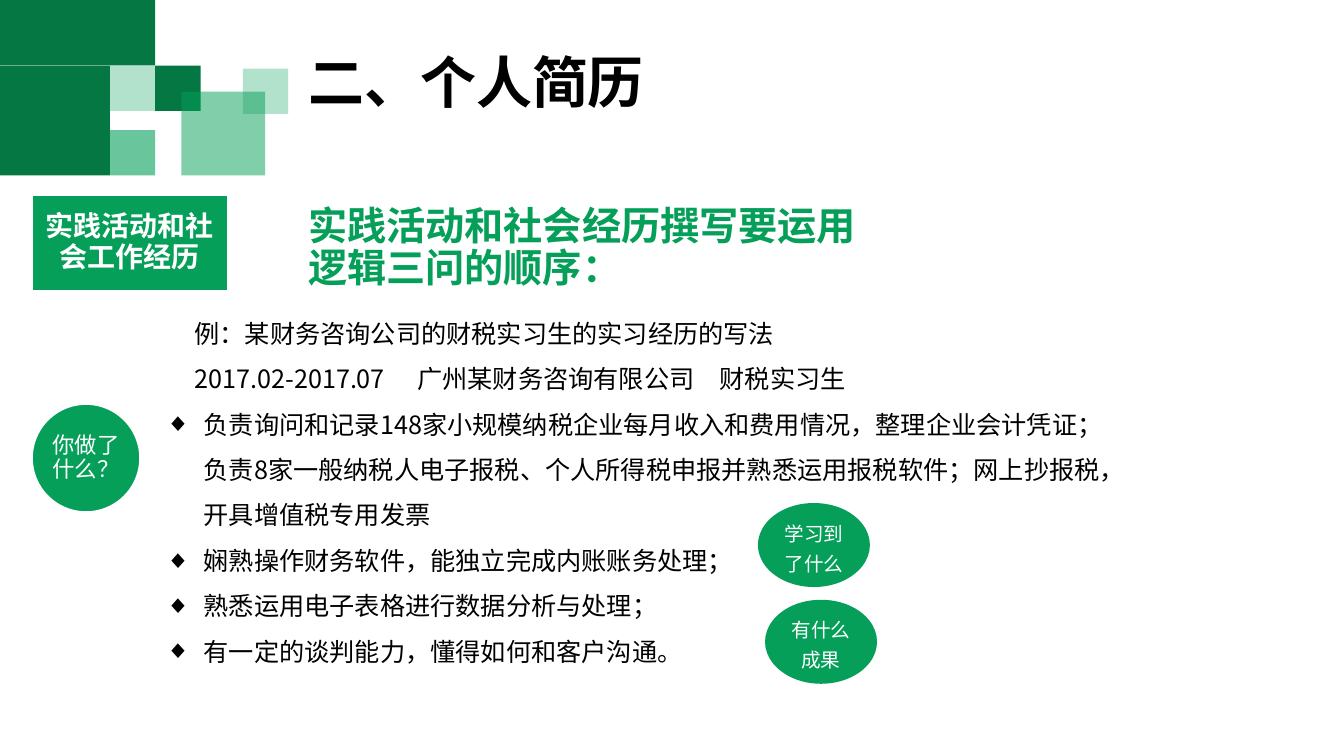
from lxml import etree
from pptx import Presentation
from pptx.dml.color import RGBColor
from pptx.enum.shapes import MSO_SHAPE
from pptx.enum.text import MSO_ANCHOR, MSO_AUTO_SIZE, PP_ALIGN
from pptx.oxml.ns import qn
from pptx.util import Pt

RECT, OVAL = MSO_SHAPE.RECTANGLE, MSO_SHAPE.OVAL
TOP, MIDDLE = MSO_ANCHOR.TOP, MSO_ANCHOR.MIDDLE
LEFT, CENTER = PP_ALIGN.LEFT, PP_ALIGN.CENTER
FIXED = MSO_AUTO_SIZE.NONE

GREEN = RGBColor(0x05, 0x9F, 0x59)
DARK = RGBColor(0x04, 0x77, 0x43)
BLACK = RGBColor(0, 0, 0)
WHITE = RGBColor(255, 255, 255)
LATIN, HAN = "Calibri", "Noto Sans CJK SC"

# left, top, width, height, colour, opacity in percent
BLOCKS = [
    (0, 46.8, 78.5, 78.5, DARK, 100),
    (0, 0, 110.9, 46.8, DARK, 100),
    (78.5, 46.8, 32.4, 32.4, GREEN, 30),
    (110.9, 46.8, 32.4, 32.4, DARK, 100),
    (78.5, 92.9, 32.4, 32.4, GREEN, 60),
    (129.6, 65.5, 59.8, 59.8, GREEN, 50),
    (173.5, 49, 32.4, 32.4, GREEN, 30),
]
INTRO = [
    "例：某财务咨询公司的财税实习生的实习经历的写法",
    "2017.02-2017.07\t广州某财务咨询有限公司\t财税实习生",
]
DUTIES = [
    "负责询问和记录148家小规模纳税企业每月收入和费用情况，整理企业会计凭证；"
    "负责8家一般纳税人电子报税、个人所得税申报并熟悉运用报税软件；"
    "网上抄报税，开具增值税专用发票",
    "娴熟操作财务软件，能独立完成内账账务处理；",
    "熟悉运用电子表格进行数据分析与处理；",
    "有一定的谈判能力，懂得如何和客户沟通。",
]


class Page:
    def __init__(self, slide):
        self.slide = slide
        self.shapes = slide.shapes

    def place(self, shape, box):
        shape.left, shape.top, shape.width, shape.height = map(Pt, box)

    def style(self, para, size, color, face=LATIN, bold=False, gap=0.9, align=LEFT):
        font = para.font
        font.name, font.size, font.bold = face, Pt(size), bold
        font.color.rgb = color
        para.line_spacing = gap
        para.space_before = para.space_after = Pt(0)
        para.alignment = align

    def frame(self, shape, anchor=TOP, inset=(7.2, 3.6)):
        frame = shape.text_frame
        frame.word_wrap, frame.auto_size = True, FIXED
        frame.vertical_anchor = anchor
        frame.margin_left = frame.margin_right = Pt(inset[0])
        frame.margin_top = frame.margin_bottom = Pt(inset[1])
        return frame

    def title(self, text, box):
        shape = self.shapes.title
        self.place(shape, box)
        frame = self.frame(shape)
        frame.text = text
        self.style(frame.paragraphs[0], 40, BLACK, bold=True)

    def head(self, text, box):
        frame = self.frame(self.shapes.add_textbox(*map(Pt, box)))
        frame.text = text
        self.style(frame.paragraphs[0], 28, GREEN, bold=True)

    def block(self, kind, box, color, alpha=100, edge=False):
        shape = self.shapes.add_shape(kind, *map(Pt, box))
        shape.shadow.inherit = False
        shape.fill.solid()
        shape.fill.fore_color.rgb = color
        if alpha < 100:
            tint = shape.fill._xPr.find(".//" + qn("a:srgbClr"))
            etree.SubElement(tint, qn("a:alpha"), val=str(alpha * 1000))
        if edge:
            shape.line.color.rgb = WHITE
            shape.line.width = Pt(1)
        else:
            shape.line.fill.background()
        return shape

    def label(self, kind, box, text, size, inset=(0.72, 0.72), edge=True, **style):
        shape = self.block(kind, box, GREEN, edge=edge)
        frame = self.frame(shape, MIDDLE, inset)
        frame.text = text
        self.style(frame.paragraphs[0], size, WHITE, align=CENTER, **style)

    def indent(self, para, left, first, mark=None, stops=()):
        """Set the indents, the bullet sign and the tab stops of a paragraph."""
        props = para._p.get_or_add_pPr()
        props.set("marL", str(Pt(left)))
        props.set("indent", str(Pt(first)))
        if mark:
            sign = etree.Element(qn("a:buChar"), char=mark)
        else:
            sign = etree.Element(qn("a:buNone"))
        tabs = etree.Element(qn("a:tabLst"))
        for stop in stops:
            etree.SubElement(tabs, qn("a:tab"), pos=str(Pt(stop)), algn="l")
        last = props.find(qn("a:defRPr"))
        last.addprevious(sign)
        last.addprevious(tabs)

    def body(self, box):
        shape = self.slide.placeholders[1]
        self.place(shape, box)
        frame = self.frame(shape)
        frame.text = "\n".join(INTRO + DUTIES)
        for num, para in enumerate(frame.paragraphs):
            self.style(para, 18, BLACK, HAN, gap=Pt(32.4))
            if num < len(INTRO):
                self.indent(para, 0, 20.9, stops=(181, 399))
            else:
                self.indent(para, 27.4, -27.4, "◆")


def main():
    deck = Presentation()
    deck.slide_width, deck.slide_height = Pt(960), Pt(540)
    page = Page(deck.slides.add_slide(deck.slide_layouts[1]))
    for *box, color, alpha in BLOCKS:
        page.block(RECT, box, color, alpha)
    page.title("二、个人简历", (213, 36, 430.6, 60))
    page.head("实践活动和社会经历撰写要运用逻辑三问的顺序：", (213, 144, 430.6, 72))
    page.label(RECT, (23, 139.7, 139.7, 67.7), "实践活动和社会工作经历", 20, bold=True)
    page.body((110.9, 213, 697, 265))
    page.label(OVAL, (23, 288.7, 77, 77), "你做了什么？", 16)
    for left, top, text in ((541.4, 359.3, "学习到了什么"), (546.5, 428.4, "有什么成果")):
        page.label(OVAL, (left, top, 80, 60), text, 14, (6, 3.6), False,
                   face=HAN, gap=Pt(21.4))
    deck.save("out.pptx")


if __name__ == "__main__":
    main()
